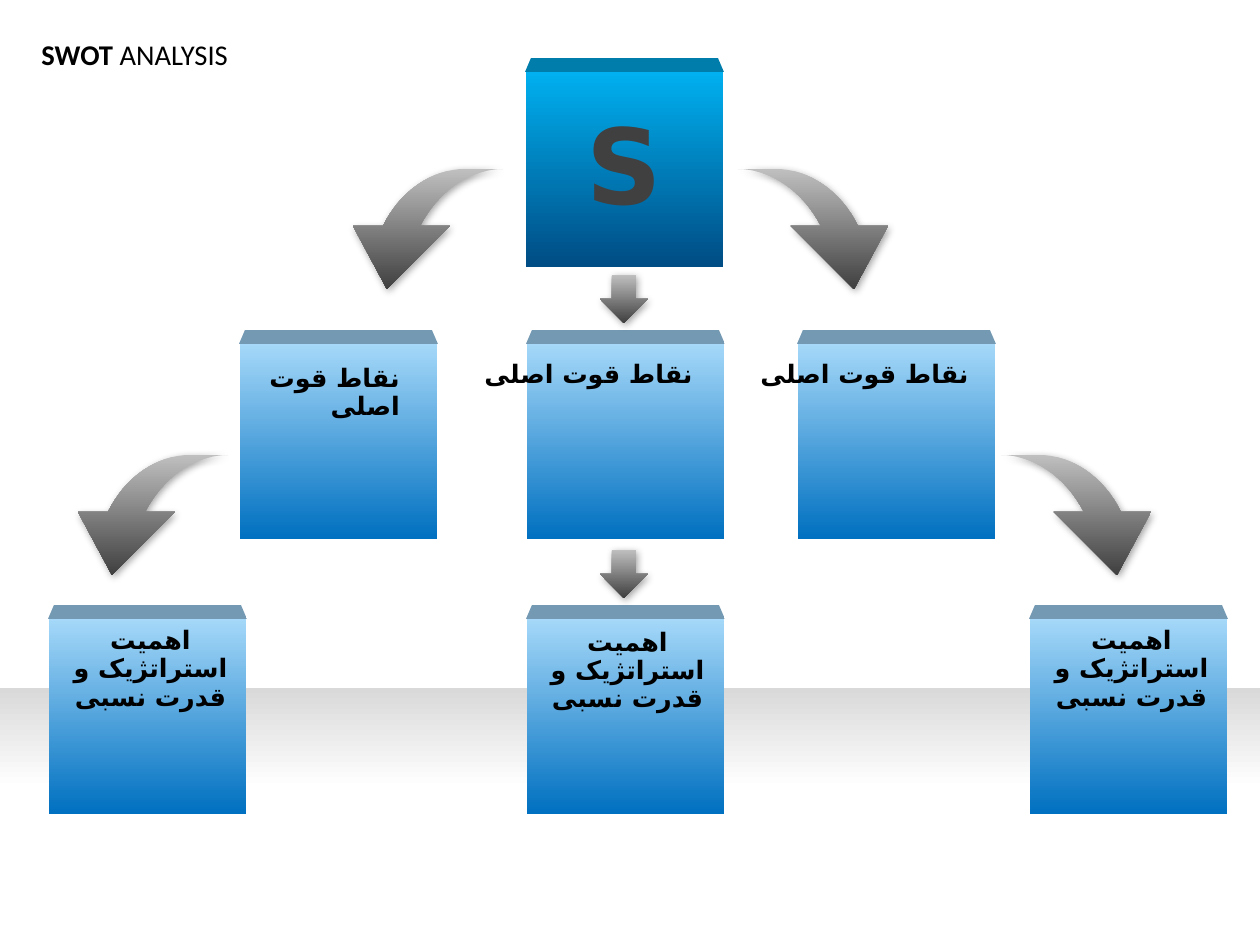
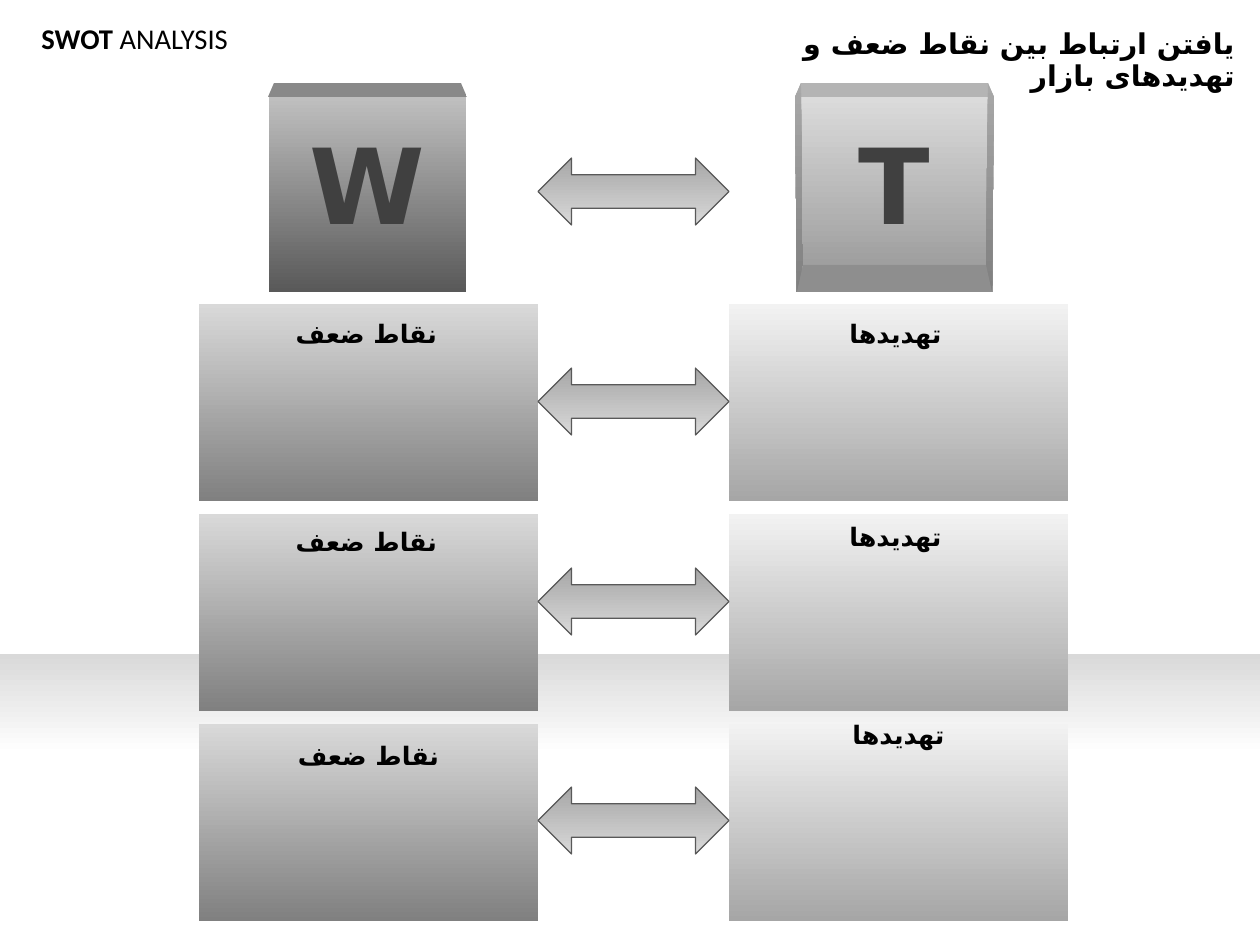
from dataclasses import dataclass
from typing import Optional

from lxml import etree
from pptx import Presentation
from pptx.dml.color import RGBColor
from pptx.enum import shapes, text
from pptx.oxml.ns import qn
from pptx.util import Pt

PX = 8000  # EMU in one px
BLOCK = 197
PANEL_WIDTH = 339
Point = tuple[float, float]
Gradient = tuple[str, str]


@dataclass(frozen=True)
class BlockStyle:
    face: Gradient
    lid: str
    sides: Optional[Gradient] = None
    base: Optional[str] = None


@dataclass(frozen=True)
class Theme:
    ink: str = "000000"
    letter: str = "404040"
    outline: str = "595959"
    band: Gradient = ("D9D9D9", "FFFFFF")
    arrow: Gradient = ("BFBFBF", "404040")
    double_arrow: Gradient = ("A6A6A6", "D9D9D9")
    weakness_panel: Gradient = ("D9D9D9", "808080")
    threat_panel: Gradient = ("F2F2F2", "A6A6A6")
    strength: BlockStyle = BlockStyle(("00B0F0", "004C84"), "007DAA")
    detail: BlockStyle = BlockStyle(("A5D8F9", "0070C0"), "7499B3")
    weakness: BlockStyle = BlockStyle(("BFBFBF", "595959"), "898989")
    threat: BlockStyle = BlockStyle(("DBDBDB", "959595"), "B4B4B4",
                                    ("A8A8A8", "808080"), "8E8E8E")
    title_font: str = "Calibri"
    letter_font: str = "DejaVu Sans"
    label_font: str = "Roboto"
    alternate_font: str = "Arial"
    persian_font: str = "DejaVu Sans"
    title_size: int = 18
    label_size: int = 16
    letter_size: int = 66
    line_spacing: float = 0.93


THEME = Theme()


@dataclass(frozen=True)
class Label:
    words: str
    left: int
    top: int
    width: int
    align: text.PP_ALIGN = text.PP_ALIGN.CENTER
    font: str = THEME.label_font
    size: int = THEME.label_size


@dataclass(frozen=True)
class Block:
    left: int
    top: int
    style: BlockStyle
    letter: str = ""
    letter_margin: int = 16


def fill_gradient(shape, colours: Gradient) -> None:
    """Fill from the first colour at the top to the second at the bottom."""
    shape.fill.gradient()
    shape.fill.gradient_angle = 270
    for stop, colour in zip(shape.fill.gradient_stops, colours):
        stop.color.rgb = RGBColor.from_string(colour)


def make_plain(shape) -> None:
    shape.shadow.inherit = False
    shape.line.fill.background()


def add_soft_shadow(shape) -> None:
    effects = shape._element.spPr.find(qn("a:effectLst"))
    shadow = etree.SubElement(effects, qn("a:outerShdw"), blurRad=str(Pt(5)),
                              dist=str(Pt(2)), dir=str(62 * 60000),
                              algn="tl", rotWithShape="0")
    colour = etree.SubElement(shadow, qn("a:srgbClr"), val="000000")
    etree.SubElement(colour, qn("a:alpha"), val="37000")


def add_preset(slide, kind, left: int, top: int, width: int, height: int,
               colours: Gradient):
    shape = slide.shapes.add_shape(kind, left * PX, top * PX,
                                   width * PX, height * PX)
    make_plain(shape)
    fill_gradient(shape, colours)
    return shape


def add_polygon(slide, points: list[Point], colours: Gradient):
    corners = [(x * PX, y * PX) for x, y in points]
    builder = slide.shapes.build_freeform(*corners[0], scale=1.0)
    builder.add_line_segments(corners[1:], close=True)
    shape = builder.convert_to_shape()
    make_plain(shape)
    fill_gradient(shape, colours)
    return shape


def format_paragraph(paragraph, font: str, size: int, colour: str,
                     align: text.PP_ALIGN) -> None:
    paragraph.alignment = align
    paragraph.line_spacing = THEME.line_spacing
    paragraph.font.size = Pt(size)
    paragraph.font.bold = True
    paragraph.font.color.rgb = RGBColor.from_string(colour)
    paragraph.font.name = font


def set_right_to_left(paragraph) -> None:
    properties = paragraph._p.get_or_add_pPr()
    properties.set("rtl", "1")
    etree.SubElement(properties.find(qn("a:defRPr")), qn("a:cs"),
                     typeface=THEME.persian_font)


def add_label(slide, label: Label) -> None:
    box = slide.shapes.add_textbox(label.left * PX, label.top * PX,
                                   label.width * PX, 40 * PX)
    box.text_frame.word_wrap = True
    paragraph = box.text_frame.paragraphs[0]
    paragraph.text = label.words
    format_paragraph(paragraph, label.font, label.size, THEME.ink, label.align)
    set_right_to_left(paragraph)


def add_block(slide, block: Block) -> None:
    """Draw a cube seen from the front, with its lid and any bevelled sides."""
    style = block.style

    def place(points: list[Point]) -> list[Point]:
        return [(block.left + x, block.top + y) for x, y in points]

    face = add_preset(slide, shapes.MSO_SHAPE.RECTANGLE, block.left, block.top,
                      BLOCK, BLOCK - 2, style.face)
    add_polygon(slide, place([(-1, 0), (5, -14), (BLOCK - 5, -14),
                              (BLOCK + 1, 0)]), (style.lid, style.lid))
    if style.sides:
        strip = [(-1, 0), (5, -14), (7, 168), (1, 195)]
        add_polygon(slide, place(strip), style.sides)
        add_polygon(slide, place([(BLOCK - x, y) for x, y in strip]), style.sides)
    if style.base:
        add_polygon(slide, place([(7, 168), (BLOCK - 7, 168), (BLOCK - 1, 195),
                                  (1, 195)]), (style.base, style.base))
    if block.letter:
        frame = face.text_frame
        frame.word_wrap = False
        frame.vertical_anchor = text.MSO_ANCHOR.MIDDLE
        frame.margin_bottom = block.letter_margin * PX
        paragraph = frame.paragraphs[0]
        paragraph.text = block.letter
        format_paragraph(paragraph, THEME.letter_font, THEME.letter_size,
                         THEME.letter, text.PP_ALIGN.CENTER)


def bezier(start: Point, first: Point, second: Point, end: Point,
           steps: int = 16) -> list[Point]:
    points = []
    for step in range(steps + 1):
        t = step / steps
        weights = ((1 - t) ** 3, 3 * t * (1 - t) ** 2, 3 * t * t * (1 - t), t ** 3)
        pairs = list(zip(weights, (start, first, second, end)))
        points.append((sum(w * p[0] for w, p in pairs),
                       sum(w * p[1] for w, p in pairs)))
    return points


def add_curved_arrow(slide, left: int, top: int, direction: int) -> None:
    """Sweep down from a tail at (left, top); direction 1 is right, -1 left."""
    outline = [(116, 120), (53, 57),
               *bezier((83, 57), (65, 22), (33, 0), (0, 0)),
               *bezier((38, 0), (71, 0), (103, 22), (120, 57)), (150, 57)]
    arrow = add_polygon(slide, [(left + direction * x, top + y)
                                for x, y in outline], THEME.arrow)
    add_soft_shadow(arrow)


def add_down_arrow(slide, top: int) -> None:
    arrow = add_preset(slide, shapes.MSO_SHAPE.DOWN_ARROW, 600, top, 48, 48,
                       THEME.arrow)
    add_soft_shadow(arrow)


def add_double_arrow(slide, top: int) -> None:
    arrow = add_preset(slide, shapes.MSO_SHAPE.LEFT_RIGHT_ARROW, 538, top,
                       191, 67, THEME.double_arrow)
    arrow.line.color.rgb = RGBColor.from_string(THEME.outline)
    arrow.line.width = Pt(0.75)


def start_slide(presentation, title_top: int, band_top: int):
    """Add a slide with the shared title and shaded floor band."""
    slide = presentation.slides.add_slide(presentation.slide_layouts[5])
    add_preset(slide, shapes.MSO_SHAPE.RECTANGLE, 0, band_top, 1260, 100,
               THEME.band)
    title = slide.shapes.title
    title.left, title.top = 30 * PX, title_top * PX
    title.width, title.height = 211 * PX, 45 * PX
    frame = title.text_frame
    frame.word_wrap = False
    frame.auto_size = text.MSO_AUTO_SIZE.NONE
    frame.vertical_anchor = text.MSO_ANCHOR.TOP
    paragraph = frame.paragraphs[0]
    format_paragraph(paragraph, THEME.title_font, THEME.title_size, THEME.ink,
                     text.PP_ALIGN.LEFT)
    for words, bold in (("SWOT ", True), ("ANALYSIS", False)):
        run = paragraph.add_run()
        run.text = words
        run.font.bold = bold
    return slide


def build_strengths(presentation) -> None:
    slide = start_slide(presentation, title_top=34, band_top=688)
    add_block(slide, Block(526, 72, THEME.strength, "S", letter_margin=6))
    for top, lefts in ((344, (240, 527, 798)), (619, (49, 527, 1030))):
        for left in lefts:
            add_block(slide, Block(left, top, THEME.detail))
    for left, top, direction in ((738, 169, 1), (503, 169, -1),
                                 (1001, 455, 1), (228, 455, -1)):
        add_curved_arrow(slide, left, top, direction)
    for top in (275, 550):
        add_down_arrow(slide, top)

    strength = "نقاط قوت اصلی"
    importance = "اهمیت استراتژیک و قدرت نسبی"
    right = text.PP_ALIGN.RIGHT
    for label in (
        Label(strength, 210, 359, 201, right, THEME.alternate_font),
        Label(strength, 373, 355, 331, right, THEME.alternate_font),
        Label(strength, 649, 355, 331, right),
        Label(importance, 53, 621, 195),
        Label(importance, 530, 623, 195),
        Label(importance, 1034, 621, 195, font=THEME.alternate_font),
    ):
        add_label(slide, label)


def build_weaknesses_and_threats(presentation) -> None:
    slide = start_slide(presentation, title_top=18, band_top=654)
    add_block(slide, Block(269, 97, THEME.weakness, "W"))
    add_block(slide, Block(796, 97, THEME.threat, "T"))
    columns = (
        ("نقاط ضعف", 199, THEME.weakness_panel,
         ((208, 315), (208, 523), (210, 737))),
        ("تهدیدها", 729, THEME.threat_panel,
         ((737, 315), (737, 518), (740, 716))),
    )
    for words, left, colours, label_places in columns:
        for row, (label_left, label_top) in enumerate(label_places):
            add_preset(slide, shapes.MSO_SHAPE.RECTANGLE, left, 304 + 210 * row,
                       PANEL_WIDTH, BLOCK, colours)
            add_label(slide, Label(words, label_left, label_top, 317))
    for top in (158, 368, 568, 787):
        add_double_arrow(slide, top)
    add_label(slide, Label("یافتن ارتباط بین نقاط ضعف و تهدیدهای بازار",
                           706, 23, 540, text.PP_ALIGN.RIGHT,
                           size=THEME.title_size))


def main() -> None:
    presentation = Presentation()
    presentation.slide_width = 1260 * PX
    presentation.slide_height = 945 * PX
    build_strengths(presentation)
    build_weaknesses_and_threats(presentation)
    presentation.save("out.pptx")


if __name__ == "__main__":
    main()
